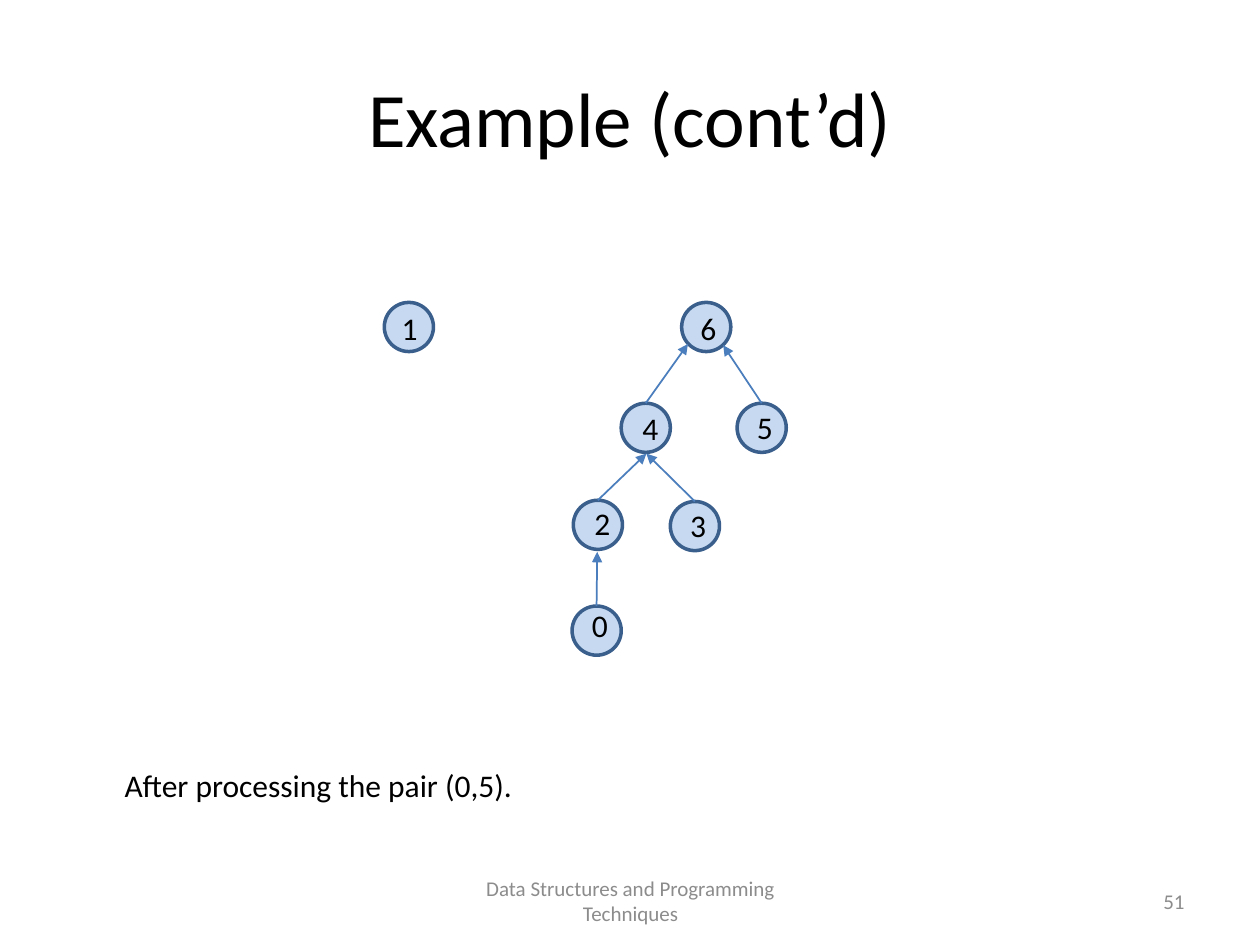
from lxml import etree
from pptx import Presentation
from pptx import util as u
from pptx.dml.color import RGBColor
from pptx.enum import shapes, text
from pptx.oxml.ns import qn

BLACK = RGBColor(0x00, 0x00, 0x00)
GREY = RGBColor(0x8C, 0x8C, 0x8C)
NODE_FILL = RGBColor(0xC6, 0xD9, 0xF1)
NODE_LINE = RGBColor(0x3A, 0x5F, 0x8C)
EDGE = RGBColor(0x4B, 0x7E, 0xBC)

DIAMETER = 0.39
NODES = {
    "0": ((4.54, 4.81), (4.6, 4.76)),
    "1": ((3.05, 2.4), (3.09, 2.4)),
    "2": ((4.55, 3.97), (4.62, 3.95)),
    "6": ((5.41, 2.4), (5.46, 2.4)),
    "5": ((5.85, 3.2), (5.91, 3.19)),
    "4": ((4.93, 3.2), (5, 3.2)),
    "3": ((5.32, 3.98), (5.38, 3.97)),
}
EDGES = [
    ("2", (5.13, 3.6)),
    ("4", (5.46, 2.73)),
    ("3", (5.13, 3.6)),
    ("0", (4.74, 4.38)),
    ("5", (5.74, 2.74)),
]
CENTER, RIGHT, LEFT = text.PP_ALIGN.CENTER, text.PP_ALIGN.RIGHT, text.PP_ALIGN.LEFT
MIDDLE = text.MSO_ANCHOR.MIDDLE
GROW = {"auto_size": text.MSO_AUTO_SIZE.SHAPE_TO_FIT_TEXT}


def inches(*values):
    """Convert plain numbers to lengths."""
    return [u.Inches(v) for v in values]


def set_attrs(target, values):
    """Set each named attribute on the target."""
    for name, value in values.items():
        setattr(target, name, value)


def write(sp, words, size, color, align, frame):
    """Fill a shape with one formatted paragraph."""
    tf = sp.text_frame
    set_attrs(tf, {"word_wrap": True, **frame})
    p = tf.paragraphs[0]
    p.alignment = align
    r = p.add_run()
    r.text = words
    set_attrs(r.font, {"name": "Calibri", "size": u.Pt(size)})
    r.font.color.rgb = color


def add_title(s, words):
    """Place and fill the title placeholder."""
    sp = s.shapes.title
    set_attrs(sp, dict(zip(("left", "top", "width", "height"), inches(0.5, 0.3, 9, 1.25))))
    write(sp, words, 44, BLACK, CENTER, {"vertical_anchor": MIDDLE})


def add_text(s, box, words, size=18, color=BLACK, align=LEFT, frame=GROW):
    """Add a text box."""
    write(s.shapes.add_textbox(*inches(*box)), words, size, color, align, frame)


def add_node(s, corner):
    """Add a tree node circle."""
    sp = s.shapes.add_shape(shapes.MSO_SHAPE.OVAL, *inches(*corner, DIAMETER, DIAMETER))
    sp.shadow.inherit = False
    sp.fill.solid()
    sp.fill.fore_color.rgb = NODE_FILL
    sp.line.color.rgb = NODE_LINE
    sp.line.width = u.Pt(2)
    return sp


def add_edge(s, child, end):
    """Add an arrow from the top of a child node towards its parent."""
    c = s.shapes.add_connector(
        shapes.MSO_CONNECTOR.STRAIGHT, child.left, child.top, *inches(*end)
    )
    c.begin_connect(child, 0)
    c.line.color.rgb = EDGE
    c.line.width = u.Pt(1)
    etree.SubElement(c.line._get_or_add_ln(), qn("a:tailEnd"), type="triangle")
    etree.SubElement(c._element.spPr, qn("a:effectLst"))


def main():
    """Build the slide and save it."""
    prs = Presentation()
    set_attrs(prs, {"slide_width": u.Inches(10), "slide_height": u.Inches(7.5)})
    s = prs.slides.add_slide(prs.slide_layouts[5])
    add_title(s, "Example (cont’d)")
    footer = {"size": 12, "color": GREY, "frame": {"vertical_anchor": MIDDLE}}
    add_text(s, (3.42, 6.95, 3.17, 0.4), "Data Structures and Programming Techniques",
             align=CENTER, **footer)
    add_text(s, (7.17, 6.95, 2.33, 0.4), "51", align=RIGHT, **footer)
    nodes = {label: add_node(s, corner) for label, (corner, _) in NODES.items()}
    for label, (_, corner) in NODES.items():
        add_text(s, (*corner, 0.27, 0.4), label, align=CENTER)
    add_text(s, (0.89, 6.03, 7.26, 0.4), "After processing the pair (0,5).")
    for child, end in EDGES:
        add_edge(s, nodes[child], end)
    prs.save("out.pptx")


if __name__ == "__main__":
    main()
